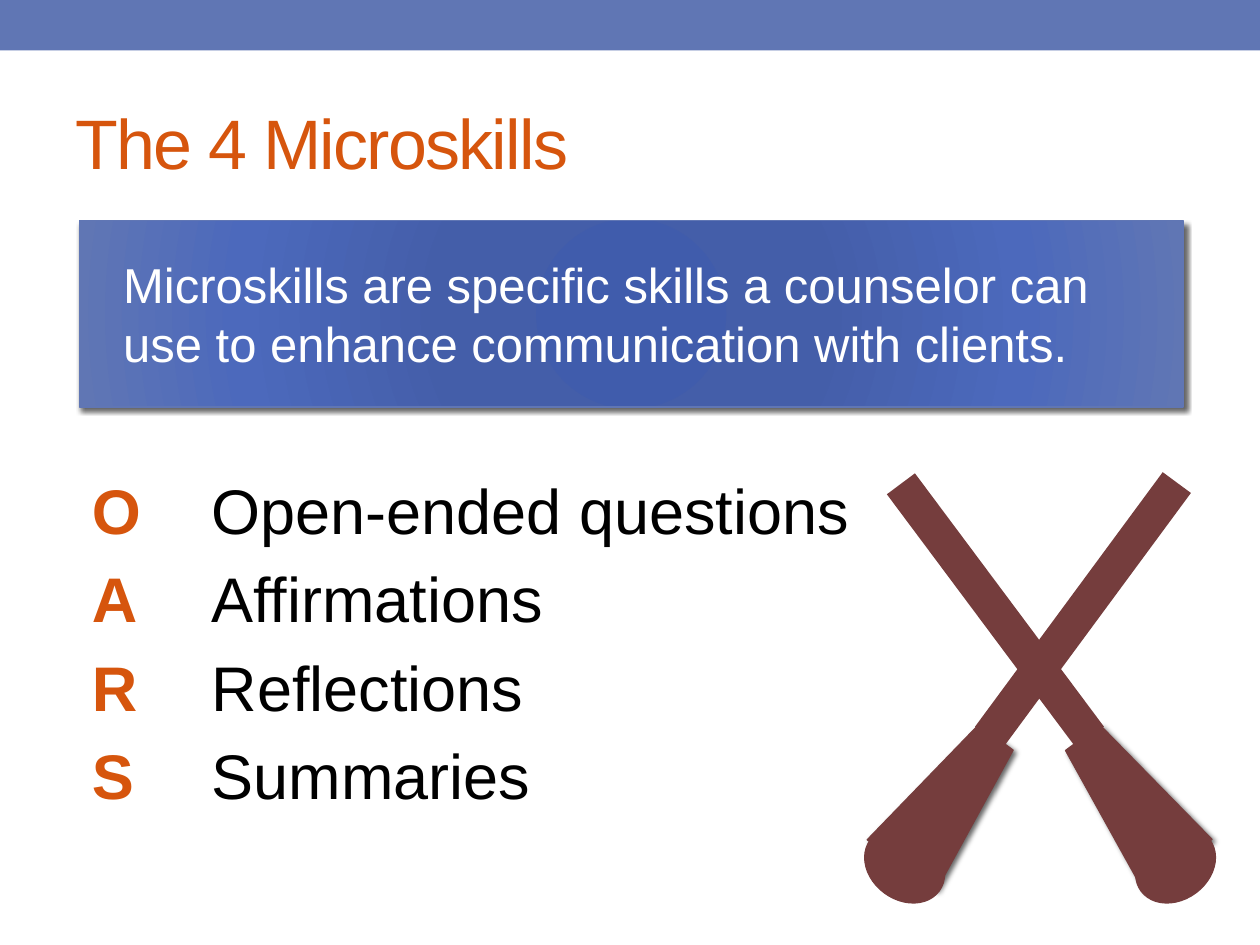
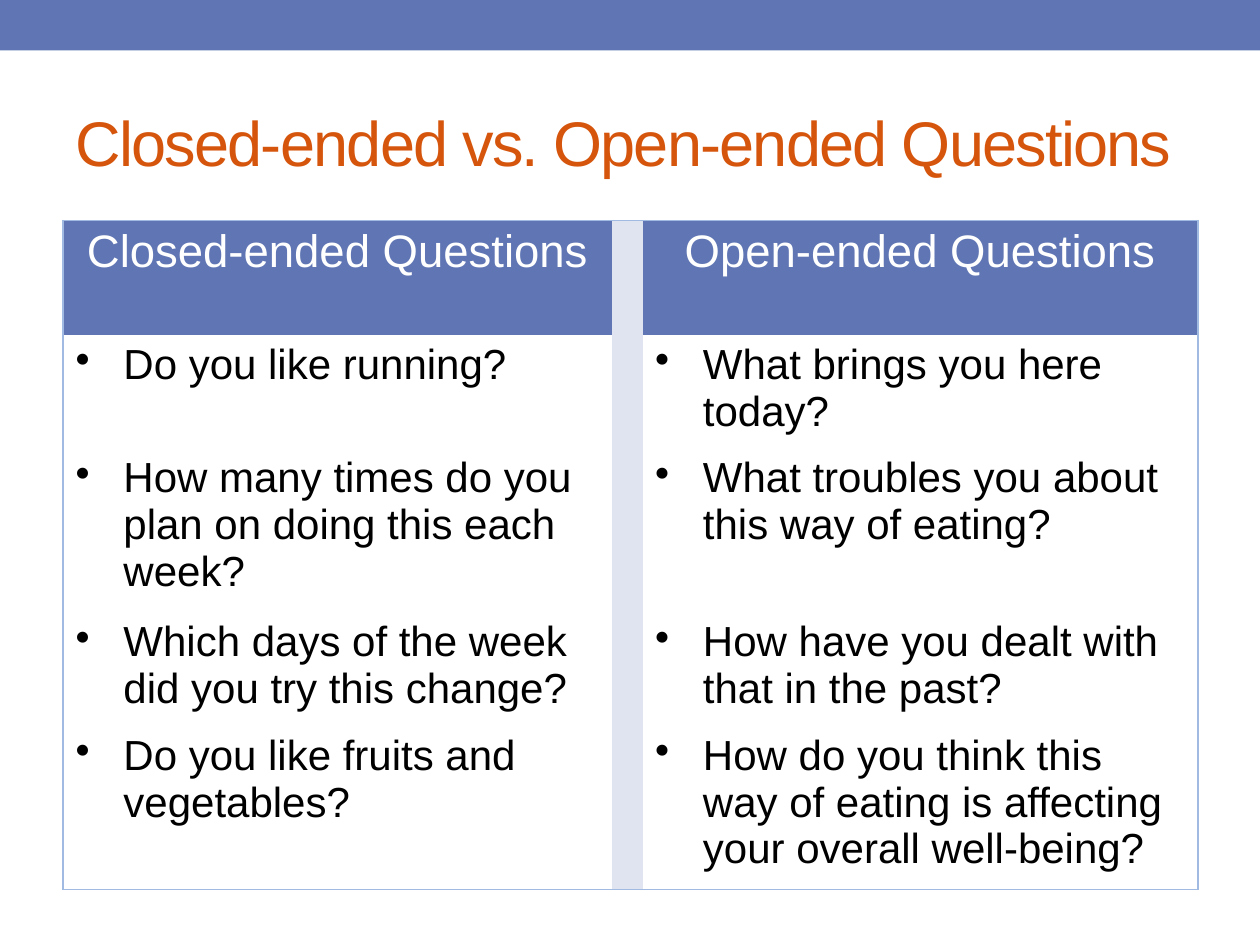
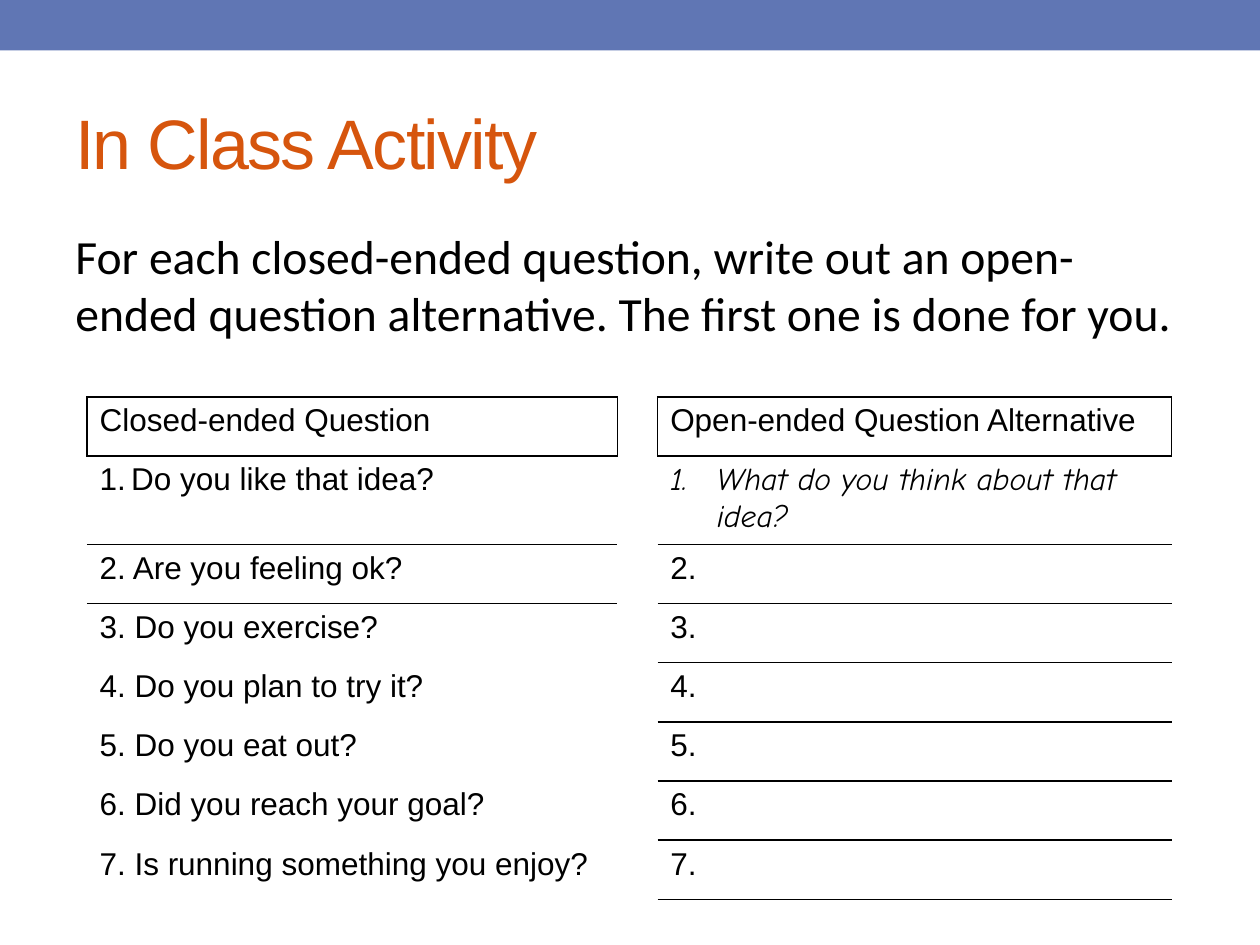
"""Build three slides on counseling microskills and open-ended questions."""
import pptx
import pptx.dml.color
import pptx.enum.shapes
import pptx.enum.text
import pptx.oxml
import pptx.oxml.ns
import pptx.util
from dataclasses import dataclass

TITLES = [
    ("The 4 Microskills", 40),
    ("Closed-ended vs. Open-ended Questions", 36),
    ("In Class Activity", 40),
]
CLAIM = ("Microskills are specific skills a counselor can use to enhance "
         "communication with clients.")
SKILLS = [
    ("O", "Open-ended questions"),
    ("A", "Affirmations"),
    ("R", "Reflections"),
    ("S", "Summaries"),
]
HEADS = ("Closed-ended Questions", "Open-ended Questions")
PAIRS = [
    ("Do you like running?", "What brings you here today?"),
    ("How many times do you plan on doing this each week?",
     "What troubles you about this way of eating?"),
    ("Which days of the week did you try this change?",
     "How have you dealt with that in the past?"),
    ("Do you like fruits and vegetables?",
     "How do you think this way of eating is affecting your overall well-being?"),
]
TASK = ("For each closed-ended question, write out an open-ended question "
        "alternative. The first one is done for you.")
FORM = ("Closed-ended Question", "Open-ended Question Alternative")
FIRST = ("Do you like that idea?", "What do you think about that idea?")
ASKS = [
    "Are you feeling ok?",
    "Do you exercise?",
    "Do you plan to try it?",
    "Do you eat out?",
    "Did you reach your goal?",
    "Is running something you enjoy?",
]
OARS = [
    {"blade": 7.19, "tip": 6.84, "turn": 36.4, "pole": (9.34, 3.83, 7.85, 5.85)},
    {"blade": 8.63, "tip": 8.99, "turn": 323.3, "pole": (7.15, 3.84, 8.65, 5.85)},
]


@dataclass(frozen=True)
class Theme:
    band: str = "6076B4"
    title: str = "D6550D"
    ink: str = "000000"
    white: str = "FFFFFF"
    wood: str = "753D3D"
    gap: str = "DFE4F0"
    frame: str = "A0BAE1"
    glow: tuple = ((0, "405CAC"), (34, "445EA9"), (70, "4C69BC"), (100, "6076B4"))
    font: str = "Arial"
    body: str = "Calibri"
    hand: str = "Comic Neue"
    skill: float = 36
    claim: float = 28
    task: float = 27.2
    head: float = 26
    item: float = 24
    form: float = 18


LOOK = Theme()
KIND = pptx.enum.shapes.MSO_SHAPE
ALIGN = pptx.enum.text.PP_ALIGN
MID = pptx.enum.text.MSO_ANCHOR.MIDDLE
NOGRID = "{2D5ABB26-0587-4C30-8999-92F81FD0307C}"
SPACE = pptx.oxml.ns.nsdecls("a")


def put(obj, fmt):
    for key, val in fmt.items():
        setattr(obj, key, val)


def inch(*nums):
    return [pptx.util.Inches(num) for num in nums]


def rgb(code):
    return pptx.dml.color.RGBColor.from_string(code)


def node(text):
    head, tail = text.split(">", 1)
    slash = "/" if head.endswith("/") else ""
    return pptx.oxml.parse_xml(f"{head.rstrip('/')} {SPACE}{slash}>{tail}")


def write(frame, text, size, color=LOOK.ink, name=LOOK.font, align=ALIGN.LEFT, **fmt):
    frame.word_wrap = True
    para = frame.paragraphs[0]
    para.alignment = align
    run = para.add_run()
    run.text = text
    put(run.font, {"size": pptx.util.Pt(size), "name": name, **fmt})
    run.font.color.rgb = rgb(color)
    return para


def indent(para, left, first, mark=None):
    props = para._p.get_or_add_pPr()
    for key, num in (("marL", left), ("indent", first)):
        props.set(key, str(pptx.util.Inches(num)))
    if mark:
        props.append(node(mark))


def shape(shapes, kind, box, color, line=True):
    item = shapes.add_shape(kind, *inch(*box))
    item.shadow.inherit = False
    item.fill.solid()
    item.fill.fore_color.rgb = rgb(color)
    if line:
        item.line.color.rgb = rgb(color)
        item.line.width = pptx.util.Pt(0.75)
    else:
        item.line.fill.background()
    return item


def shade(item):
    item._element.spPr.find(pptx.oxml.ns.qn("a:effectLst")).append(node(
        '<a:outerShdw blurRad="38100" dist="25400" dir="2700000" rotWithShape="0">'
        f'<a:srgbClr val="{LOOK.ink}"><a:alpha val="60000"/></a:srgbClr></a:outerShdw>'))


def glow(item):
    stops = "".join(f'<a:gs pos="{pos * 1000}"><a:srgbClr val="{code}"/></a:gs>'
                    for pos, code in LOOK.glow)
    props = item._element.spPr
    solid = props.find(pptx.oxml.ns.qn("a:solidFill"))
    props.replace(solid, node(
        f'<a:gradFill rotWithShape="1"><a:gsLst>{stops}</a:gsLst><a:path path="circle">'
        '<a:fillToRect l="100000" t="100000" r="100000" b="100000"/></a:path></a:gradFill>'))


def grid(slide, left, top, cols, rows):
    item = slide.shapes.add_table(len(rows), len(cols),
                                  *inch(left, top, sum(cols), sum(rows)))
    table = item.table
    put(table, {"first_row": False, "horz_banding": False})
    table._tbl.tblPr.find(pptx.oxml.ns.qn("a:tableStyleId")).text = NOGRID
    for col, num in zip(table.columns, cols):
        col.width = pptx.util.Inches(num)
    for row, num in zip(table.rows, rows):
        row.height = pptx.util.Inches(num)
    return table


def dress(cell, sides="", color=LOOK.ink, fill=None):
    props = cell._tc.get_or_add_tcPr()
    for side in "LRTB":
        if side in sides:
            props.append(node(f'<a:ln{side} w="12700"><a:solidFill>'
                              f'<a:srgbClr val="{color}"/></a:solidFill></a:ln{side}>'))
    if fill:
        cell.fill.solid()
        cell.fill.fore_color.rgb = rgb(fill)
    else:
        cell.fill.background()


def start(deck, text, size):
    slide = deck.slides.add_slide(deck.slide_layouts[6])
    shape(slide.shapes, KIND.RECTANGLE, (0, 0, 10, 0.4), LOOK.band, line=False)
    box = slide.shapes.add_textbox(*inch(0.5, 0.58, 9, 1.08)).text_frame
    box.vertical_anchor = MID
    para = write(box, text, size, LOOK.title)
    para.runs[0].font._element.set("spc", "-100")
    return slide


def oar(slide, blade, tip, turn, pole):
    group = slide.shapes.add_group_shape().shapes
    paddle = shape(group, KIND.TRAPEZOID, (blade, 5.73, 0.68, 1.26), LOOK.wood)
    shade(paddle)
    end = shape(group, KIND.OVAL, (tip, 6.6, 0.68, 0.54), LOOK.wood)
    for part in (paddle, end):
        part.rotation = turn
    line = group.add_connector(pptx.enum.shapes.MSO_CONNECTOR.STRAIGHT, *inch(*pole))
    line.line.color.rgb = rgb(LOOK.wood)
    line.line.width = pptx.util.Pt(20)
    line._element.spPr.append(node("<a:effectLst/>"))


def skills(slide):
    panel = shape(slide.shapes, KIND.RECTANGLE, (0.63, 1.75, 8.76, 1.48), LOOK.band)
    glow(panel)
    shade(panel)
    panel.text_frame.vertical_anchor = MID
    indent(write(panel.text_frame, CLAIM, LOOK.claim, LOOK.white), 0.25, 0)
    table = grid(slide, 0.63, 3.74, (0.95, 5.72), [0.66] * len(SKILLS))
    for row, (key, name) in enumerate(SKILLS):
        pair = ((key, LOOK.title, True), (name, LOOK.ink, False))
        for col, (text, color, bold) in enumerate(pair):
            cell = table.cell(row, col)
            dress(cell)
            write(cell.text_frame, text, LOOK.skill, color, bold=bold)
    for item in OARS:
        oar(slide, **item)


def compare(slide):
    rows = (0.91, 0.84, 1.21, 0.84, 1.21)
    table = grid(slide, 0.5, 1.75, (4.36, 0.23, 4.41), rows)
    for row, (left, right) in enumerate([HEADS, *PAIRS]):
        edge = {0: "T", len(PAIRS): "B"}.get(row, "")
        fill = None if row else LOOK.band
        for col, text, side in ((0, left, "L"), (2, right, "R")):
            cell = table.cell(row, col)
            dress(cell, edge + side, LOOK.frame, fill)
            if row:
                para = write(cell.text_frame, text, LOOK.item)
                indent(para, 0.38, -0.38, '<a:buChar char="•"/>')
            else:
                write(cell.text_frame, text, LOOK.head, LOOK.white, align=ALIGN.CENTER)
        dress(table.cell(row, 1), edge, LOOK.frame, LOOK.gap)


def activity(slide):
    box = slide.shapes.add_textbox(*inch(0.5, 1.75, 9, 1.15)).text_frame
    write(box, TASK, LOOK.task, name=LOOK.body)
    lines = [FORM, FIRST]
    lines += [(f"{num}. {ask}", f"{num}.") for num, ask in enumerate(ASKS, 2)]
    rows = [0.67 if row == 1 else 0.47 for row in range(len(lines))]
    table = grid(slide, 0.69, 3.15, (4.21, 0.32, 4.08), rows)
    for row, pair in enumerate(lines):
        dress(table.cell(row, 1), "" if row else "LR")
        for col, text in zip((0, 2), pair):
            cell = table.cell(row, col)
            rule = "TB" if col or row == 1 else "T" if row == 2 else ""
            dress(cell, rule if row else "LRTB")
            hand = row == 1 and col == 2
            para = write(cell.text_frame, text, LOOK.form,
                         name=LOOK.hand if hand else LOOK.font, italic=hand)
            if row == 1:
                left = 0.37 if hand else 0.25
                indent(para, left, -left, '<a:buAutoNum type="arabicPeriod"/>')


def main():
    deck = pptx.Presentation()
    put(deck, dict(zip(("slide_width", "slide_height"), inch(10, 7.5))))
    for (text, size), build in zip(TITLES, (skills, compare, activity)):
        build(start(deck, text, size))
    deck.save("out.pptx")


if __name__ == "__main__":
    main()
